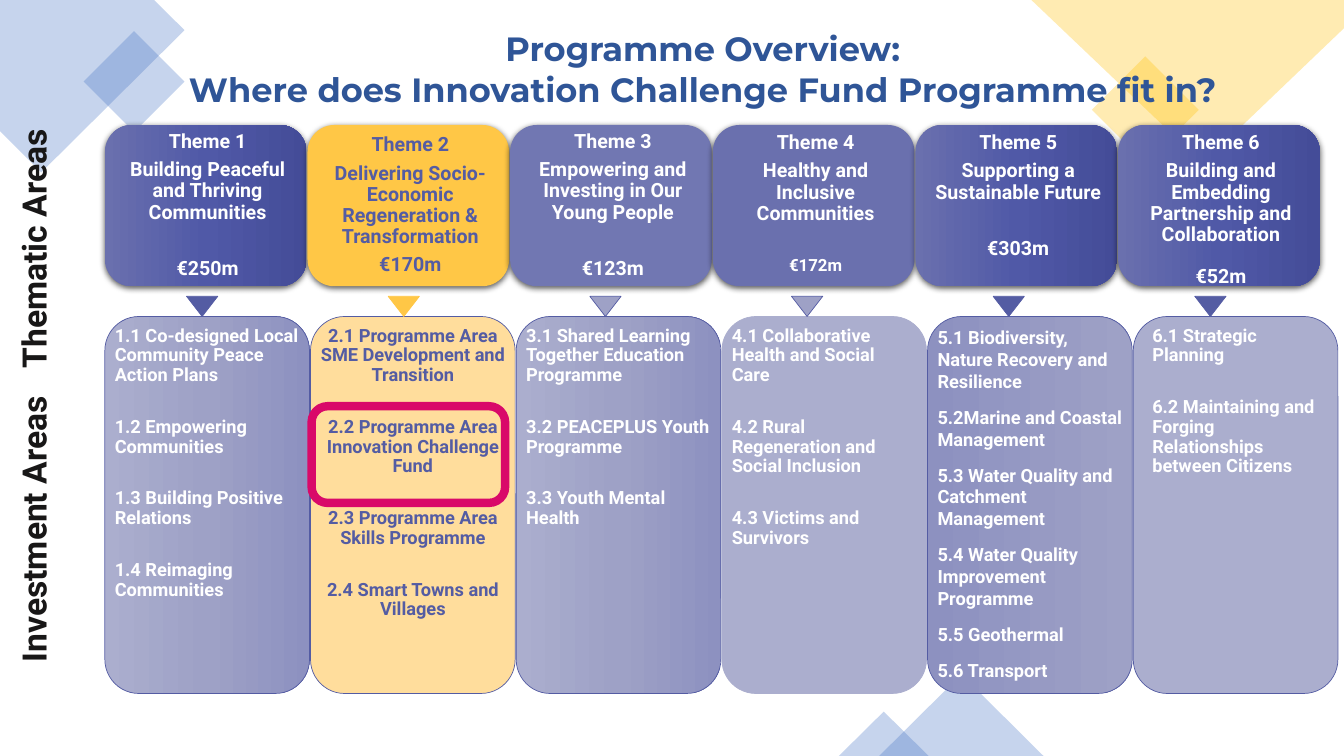
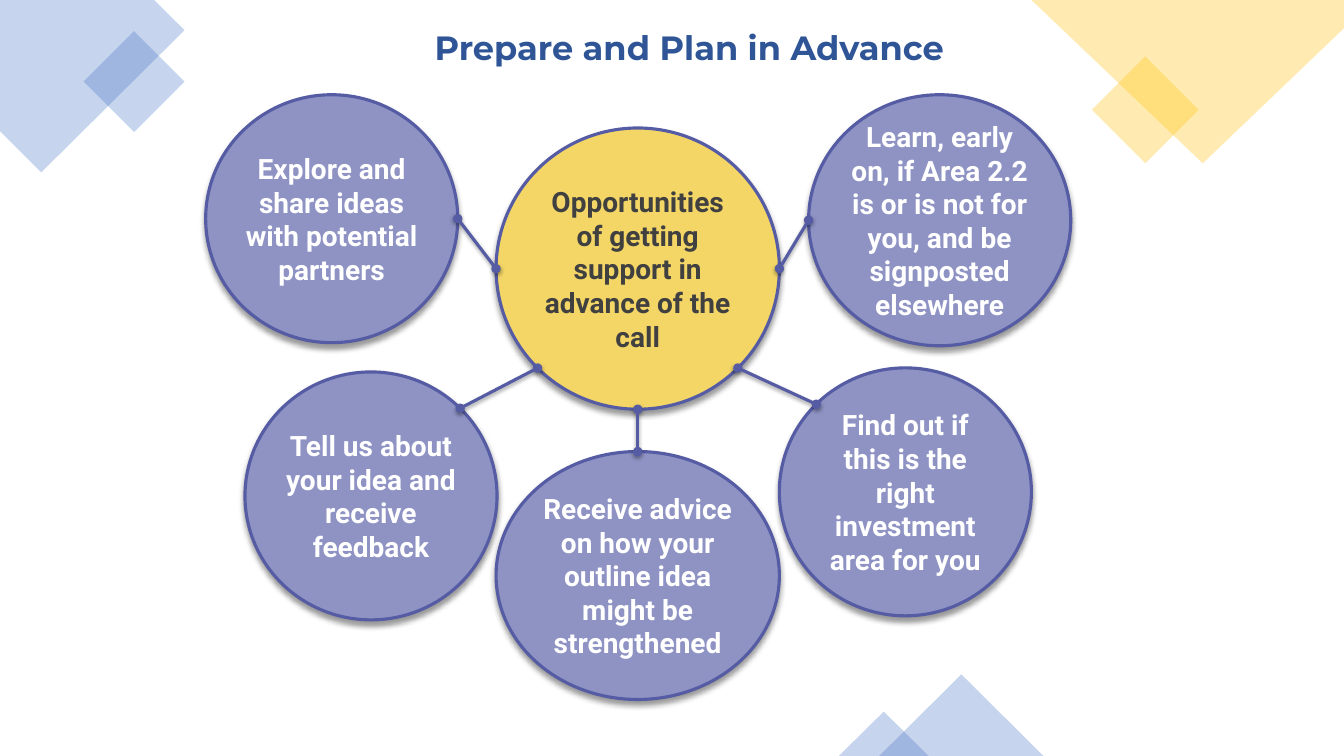
import math
from dataclasses import dataclass
from typing import Any, Optional, Sequence

import pptx
import pptx.dml.color
import pptx.enum.shapes
import pptx.enum.text
import pptx.oxml.ns
import pptx.util
from lxml import etree

Inches = pptx.util.Inches
Pt = pptx.util.Pt
SHAPE = pptx.enum.shapes.MSO_SHAPE
ALIGN = pptx.enum.text.PP_ALIGN
ANCHOR = pptx.enum.text.MSO_ANCHOR
qn = pptx.oxml.ns.qn


@dataclass(frozen=True)
class Theme:
    title_font: str = "Montserrat"
    body_font: str = "Roboto"
    title: str = "2F5597"
    label: str = "181717"
    white: str = "FFFFFF"
    indigo: str = "545CA3"
    outline: str = "555CA4"
    pale: str = "ABAECE"
    soft: str = "9EA1C6"
    amber: str = "FFC746"
    cream: str = "FFDD9C"
    bubble: str = "8E93C4"
    hub: str = "F4D667"
    hub_text: str = "404040"
    highlight: str = "D90969"
    corner_blue: str = "4472C4"
    corner_gold: str = "FFC000"
    deep_blend: tuple[str, ...] = ("6A70AE", "5059A7", "444C98")
    pale_blend: tuple[str, ...] = ("ABAECE", "9EA1C6", "8D91C0")
    dusk_blend: tuple[str, ...] = ("8D91C0", "9EA1C6")
    title_size: float = 24
    bubble_size: float = 20
    theme_size: float = 14
    area_size: float = 13
    small_size: float = 12


THEME = Theme()


@dataclass(frozen=True)
class Shadow:
    alpha: int
    blur: float
    distance: float


CARD_SHADOW = Shadow(63, 4.5, 1.5)
BUBBLE_SHADOW = Shadow(40, 4, 3)
LINK_SHADOW = Shadow(38, 3.1, 1.6)


@dataclass(frozen=True)
class Box:
    left: float
    top: float
    width: float
    height: float

    def lengths(self) -> list[int]:
        return [Inches(v) for v in (self.left, self.top, self.width, self.height)]

    def rim(self, degrees: float) -> tuple[int, int]:
        """Point on the inscribed ellipse, clockwise from the right."""
        turn = math.radians(degrees)
        return (Inches(self.left + self.width / 2 * (1 + math.cos(turn))),
                Inches(self.top + self.height / 2 * (1 + math.sin(turn))))


@dataclass(frozen=True)
class Column:
    """One programme theme; gaps are points after a paragraph."""
    name: str
    goal: str
    amount: str
    areas: tuple[str, ...]
    head_fill: tuple[str, ...] = THEME.deep_blend
    body_fill: tuple[str, ...] = THEME.pale_blend
    body_line: str = THEME.indigo
    arrow_fill: str = THEME.indigo
    arrow_line: str = THEME.outline
    text: str = THEME.white
    align: Any = ALIGN.LEFT
    anchor: Any = ANCHOR.TOP
    goal_gap: float = 25
    amount_size: float = THEME.theme_size
    area_gap: float = 23
    area_spacing: float = 0.9
    inset: float = 0


COLUMNS = (
    Column("Theme 1", "Building Peaceful and Thriving Communities", "€250m",
           ("1.1 Co-designed Local Community Peace Action Plans",
            "1.2 Empowering Communities",
            "1.3 Building Positive Relations",
            "1.4 Reimaging Communities"),
           anchor=ANCHOR.MIDDLE),
    Column("Theme 2", "Delivering Socio- Economic Regeneration & Transformation", "€170m",
           ("2.1 Programme Area SME Development and Transition",
            "2.2 Programme Area Innovation Challenge Fund",
            "2.3 Programme Area Skills Programme",
            "2.4 Smart Towns and Villages"),
           head_fill=(THEME.amber,), body_fill=(THEME.cream,),
           arrow_fill=THEME.amber, arrow_line=THEME.amber, text=THEME.indigo,
           align=ALIGN.CENTER, anchor=ANCHOR.MIDDLE, goal_gap=5),
    Column("Theme 3", "Empowering and Investing in Our Young People", "€123m",
           ("3.1 Shared Learning Together Education Programme",
            "3.2 PEACEPLUS Youth Programme",
            "3.3 Youth Mental Health"),
           head_fill=("7177B2",), arrow_fill=THEME.soft, anchor=ANCHOR.MIDDLE),
    Column("Theme 4", "Healthy and Inclusive Communities", "€172m",
           ("4.1 Collaborative Health and Social Care",
            "4.2 Rural Regeneration and Social Inclusion",
            "4.3 Victims and Survivors"),
           head_fill=("6A70AE",), body_fill=(THEME.pale,), body_line=THEME.pale,
           arrow_fill=THEME.soft, goal_gap=23, amount_size=THEME.small_size),
    Column("Theme 5", "Supporting a Sustainable Future", "€303m",
           ("5.1 Biodiversity, Nature Recovery and Resilience",
            "5.2Marine and Coastal Management",
            "5.3 Water Quality and Catchment Management",
            "5.4 Water Quality Improvement Programme",
            "5.5 Geothermal",
            "5.6 Transport"),
           body_fill=THEME.dusk_blend, area_gap=10, area_spacing=1.0),
    Column("Theme 6", "Building and Embedding Partnership and Collaboration", "€52m",
           ("6.1 Strategic Planning",
            "6.2 Maintaining and Forging Relationships between Citizens"),
           body_fill=(THEME.pale,), goal_gap=15, inset=0.09),
)


@dataclass(frozen=True)
class Bubble:
    text: str
    box: Box
    hub_angle: float


HUB_BOX = Box(4.92, 1.27, 2.81, 2.79)
BUBBLES = (
    Bubble("Learn, early on, if Area 2.2 is or is not for you, and be signposted elsewhere",
           Box(8.02, 0.94, 2.6, 2.49), 0),
    Bubble("Explore and share ideas with potential partners", Box(2.04, 0.94, 2.5, 2.46), 180),
    Bubble("Tell us about your idea and receive feedback", Box(2.43, 3.69, 2.5, 2.46), 135),
    Bubble("Receive advice on how your outline idea might be strengthened",
           Box(4.92, 4.48, 2.81, 2.46), 90),
    Bubble("Find out if this is the right investment area for you",
           Box(7.73, 3.65, 2.5, 2.46), 45),
)


def rgb(colour: str) -> pptx.dml.color.RGBColor:
    return pptx.dml.color.RGBColor.from_string(colour)


def set_effects(shape: Any, shadow: Optional[Shadow] = None) -> None:
    """Replace the inherited shadow; call after fill and line are set."""
    effects = etree.SubElement(shape.element.spPr, qn("a:effectLst"))
    if shadow:
        outer = etree.SubElement(effects, qn("a:outerShdw"), blurRad=str(Pt(shadow.blur)),
                                 dist=str(Pt(shadow.distance)), dir="5400000", rotWithShape="0")
        black = etree.SubElement(outer, qn("a:srgbClr"), val="000000")
        etree.SubElement(black, qn("a:alpha"), val=str(shadow.alpha * 1000))


def set_fill(shape: Any, colours: Sequence[str]) -> None:
    """No colour leaves the shape hollow; several blend from left to right."""
    if not colours:
        shape.fill.background()
    elif len(colours) == 1:
        shape.fill.solid()
        shape.fill.fore_color.rgb = rgb(colours[0])
    else:
        shape.fill.gradient()
        shape.fill.gradient_angle = 0
        stops = shape.element.spPr.find(".//" + qn("a:gsLst"))
        for stop in list(stops):
            stops.remove(stop)
        for i, colour in enumerate(colours):
            position = round(100000 * i / (len(colours) - 1))
            stop = etree.SubElement(stops, qn("a:gs"), pos=str(position))
            etree.SubElement(stop, qn("a:srgbClr"), val=colour)


def add_figure(slide: Any, kind: Any, box: Box, colours: Sequence[str], line: str = "",
               weight: float = 0.5, shadow: Optional[Shadow] = None) -> Any:
    shape = slide.shapes.add_shape(kind, *box.lengths())
    set_fill(shape, colours)
    if line:
        shape.line.color.rgb = rgb(line)
        shape.line.width = Pt(weight)
    else:
        shape.line.fill.background()
    set_effects(shape, shadow)
    return shape


def write(frame: Any, lines: Sequence[str], size: float, colour: str,
          font: str = THEME.body_font, align: Any = ALIGN.CENTER, gap: float = 0,
          spacing: float = 1.0) -> None:
    frame.word_wrap = True
    for i, line in enumerate(lines):
        paragraph = frame.add_paragraph() if i else frame.paragraphs[0]
        paragraph.text = line
        paragraph.alignment = align
        paragraph.line_spacing = spacing
        paragraph.space_after = Pt(gap)
        paragraph.font.name = font
        paragraph.font.size = Pt(size)
        paragraph.font.bold = True
        paragraph.font.color.rgb = rgb(colour)


def set_frame(frame: Any, left: float = 0, right: float = 0, anchor: Any = ANCHOR.MIDDLE) -> None:
    frame.margin_left, frame.margin_right = Inches(left), Inches(right)
    frame.margin_top = frame.margin_bottom = 0
    frame.vertical_anchor = anchor


def make_translucent(shape: Any) -> None:
    colour = shape.element.spPr.find(".//" + qn("a:srgbClr"))
    etree.SubElement(colour, qn("a:alpha"), val="30000")


def add_corner(slide: Any, points: Sequence[tuple[float, float]], colour: str) -> None:
    start, *rest = [(Inches(x), Inches(y)) for x, y in points]
    builder = slide.shapes.build_freeform(*start)
    builder.add_line_segments(rest, close=True)
    corner = builder.convert_to_shape()
    set_fill(corner, [colour])
    corner.line.fill.background()
    set_effects(corner)
    make_translucent(corner)


def add_base(deck: Any, title: Sequence[str], title_box: Box) -> Any:
    """Add a slide with the corner decoration and the title."""
    slide = deck.slides.add_slide(deck.slide_layouts[6])
    add_corner(slide, [(0, 0), (1.53, 0), (1.83, 0.3), (0.41, 1.71), (0, 1.3)], THEME.corner_blue)
    add_corner(slide, [(10.23, 0), (13.33, 0), (13.33, 0.28), (11.93, 1.62)], THEME.corner_gold)
    for kind, box, colour in (
            (SHAPE.DIAMOND, Box(0.83, 0.31, 1, 1), THEME.corner_blue),
            (SHAPE.DIAMOND, Box(10.83, 0.56, 1.06, 1.06), THEME.corner_gold),
            (SHAPE.ISOSCELES_TRIANGLE, Box(8.72, 6.69, 1.63, 0.81), THEME.corner_blue),
            (SHAPE.ISOSCELES_TRIANGLE, Box(8.32, 7.06, 0.89, 0.44), THEME.corner_blue)):
        make_translucent(add_figure(slide, kind, box, [colour]))
    heading = slide.shapes.add_textbox(*title_box.lengths())
    write(heading.text_frame, title, THEME.title_size, THEME.title, THEME.title_font)
    return slide


def add_column(slide: Any, index: int, column: Column) -> None:
    head = add_figure(slide, SHAPE.ROUNDED_RECTANGLE, Box(1.04 + 2.01 * index, 1.24, 2, 1.6),
                      column.head_fill, shadow=CARD_SHADOW).text_frame
    set_frame(head, left=0.04, anchor=column.anchor)
    write(head, (column.name, column.goal, column.amount), THEME.theme_size, column.text,
          gap=5, spacing=0.9)
    _, goal, amount = head.paragraphs
    goal.space_after = Pt(column.goal_gap)
    amount.font.size = Pt(column.amount_size)

    body = add_figure(slide, SHAPE.ROUNDED_RECTANGLE, Box(1.04 + 2.04 * index, 3.14, 2.03, 3.74),
                      column.body_fill, column.body_line).text_frame
    set_frame(body, column.inset, column.inset, ANCHOR.TOP)
    write(body, column.areas, THEME.area_size, column.text, align=column.align,
          gap=column.area_gap, spacing=column.area_spacing)

    add_figure(slide, SHAPE.FLOWCHART_MERGE, Box(1.85 + 2 * index, 2.94, 0.31, 0.2),
               [column.arrow_fill], column.arrow_line)


def add_side_label(slide: Any, text: str, middle: float) -> None:
    label = slide.shapes.add_textbox(*Box(0.33 - 1.63, middle - 0.25, 3.26, 0.5).lengths())
    label.rotation = 270
    write(label.text_frame, [text], THEME.title_size, THEME.label)


def add_bubble(slide: Any, text: str, box: Box, fill: str, colour: str) -> None:
    frame = add_figure(slide, SHAPE.OVAL, box, [fill], THEME.outline, 2.25,
                       BUBBLE_SHADOW).text_frame
    set_frame(frame)
    write(frame, [text], THEME.bubble_size, colour)


def add_link(slide: Any, bubble: Bubble) -> None:
    link = slide.shapes.add_connector(pptx.enum.shapes.MSO_CONNECTOR.STRAIGHT,
                                      *bubble.box.rim(bubble.hub_angle + 180),
                                      *HUB_BOX.rim(bubble.hub_angle))
    link.line.color.rgb = rgb(THEME.outline)
    link.line.width = Pt(2.25)
    for end in ("a:headEnd", "a:tailEnd"):
        etree.SubElement(link.element.spPr.find(qn("a:ln")), qn(end), type="oval")
    set_effects(link, LINK_SHADOW)


def main() -> None:
    deck = pptx.Presentation()
    deck.slide_width, deck.slide_height = Inches(13.33), Inches(7.5)

    overview = add_base(deck, ("Programme Overview:",
                               "Where does Innovation Challenge Fund Programme fit in?"),
                        Box(1.56, 0.23, 10.82, 0.91))
    for index, column in enumerate(COLUMNS):
        add_column(overview, index, column)
    add_figure(overview, SHAPE.ROUNDED_RECTANGLE, Box(3.09, 4.03, 1.92, 0.96), (),
               THEME.highlight, 6)
    add_side_label(overview, "Investment Areas", 5.25)
    add_side_label(overview, "Thematic Areas", 2.47)

    advance = add_base(deck, ["Prepare and Plan in Advance"], Box(1.44, 0.22, 10.79, 0.5))
    for bubble in BUBBLES:
        add_bubble(advance, bubble.text, bubble.box, THEME.bubble, THEME.white)
    add_bubble(advance, "Opportunities of getting support in advance of the call", HUB_BOX,
               THEME.hub, THEME.hub_text)
    for bubble in BUBBLES:
        add_link(advance, bubble)

    deck.save("out.pptx")


if __name__ == "__main__":
    main()
